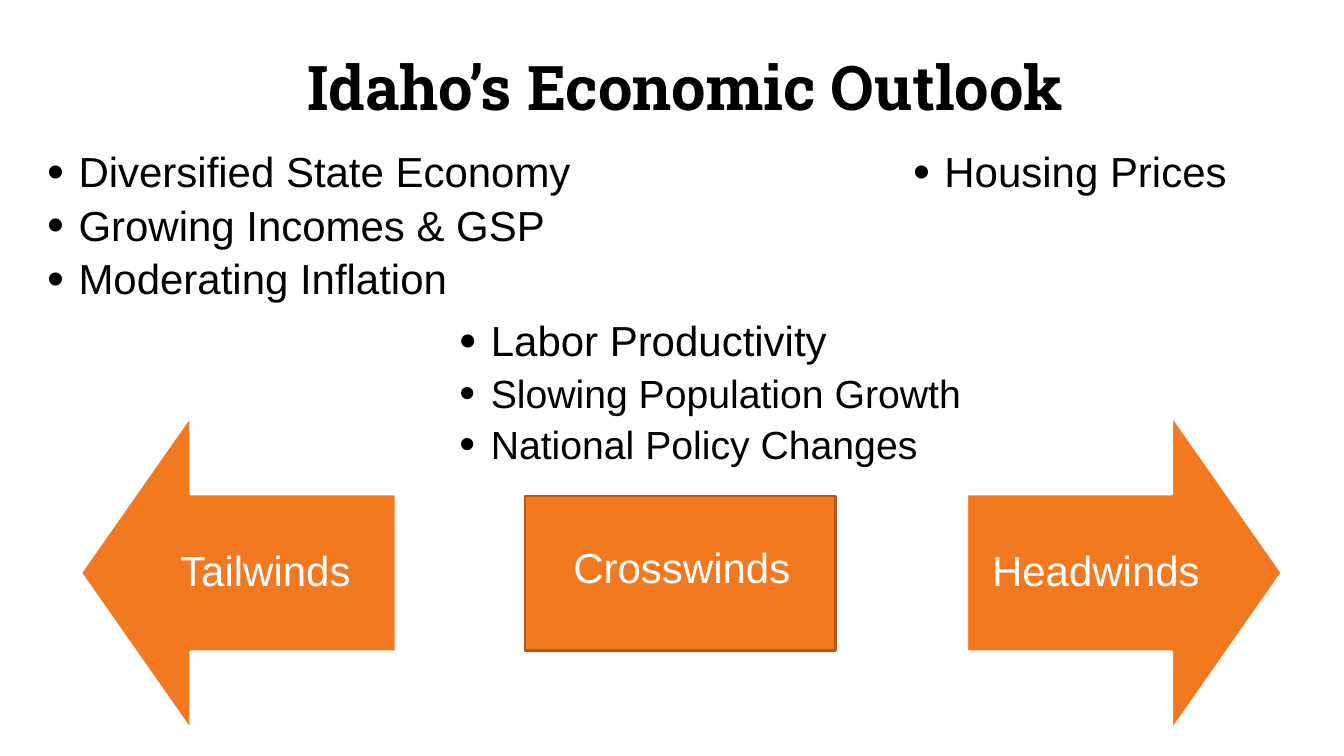
"""Build the slide on Idaho's economic outlook."""
from lxml import etree
from pptx import Presentation
from pptx import util as u
from pptx.dml.color import RGBColor
from pptx.enum import shapes, text
from pptx.oxml import ns

ORANGE = RGBColor(0xF3, 0x79, 0x20)
RUST = RGBColor(0xB4, 0x5A, 0x18)
BLACK = RGBColor(0, 0, 0)
WHITE = RGBColor(255, 255, 255)
INSET = (0.25, 0.13)


class Outlook:
    """Holds the style and the current page."""

    body = "Arial"
    heading = "Roboto Slab"
    size = 30

    def __init__(self, page):
        self.page = page

    def place(self, at):
        """Turn centimetres into lengths."""
        return [u.Cm(value) for value in at]

    def shape(self, kind, at, line, rotation=0):
        """Add an orange shape with an outline."""
        shape = self.page.shapes.add_shape(kind, *self.place(at))
        shape.shadow.inherit = False
        shape.rotation = rotation
        shape.fill.solid()
        shape.fill.fore_color.rgb = ORANGE
        shape.line.color.rgb = line
        shape.line.width = u.Pt(2)
        return shape

    def box(self, at, inset=INSET, anchor=text.MSO_ANCHOR.TOP):
        """Add an empty wrapping text box."""
        frame = self.page.shapes.add_textbox(*self.place(at)).text_frame
        side, top = self.place(inset)
        values = dict(word_wrap=True, vertical_anchor=anchor, margin_left=side,
                      margin_right=side, margin_top=top, margin_bottom=top)
        for name, value in values.items():
            setattr(frame, name, value)
        return frame

    def wording(self, para, words, font=None, **layout):
        """Fill a paragraph with one formatted span."""
        for name, value in layout.items():
            setattr(para, name, value)
        span = para.add_run()
        span.text = words
        style = dict(name=self.body, size=self.size, color=BLACK, bold=False)
        style.update(font or {})
        span.font.color.rgb = style.pop("color")
        style["size"] = u.Pt(style["size"])
        for name, value in style.items():
            setattr(span.font, name, value)

    def title(self, words, at):
        """Add the centred heading."""
        self.wording(self.box(at).paragraphs[0], words,
                     dict(name=self.heading, size=44, bold=True),
                     alignment=text.PP_ALIGN.CENTER, line_spacing=0.9)

    def bullet(self, para):
        """Give a paragraph a hanging round bullet."""
        props = para._p.get_or_add_pPr()
        props.set("marL", str(u.Cm(1.27)))
        props.set("indent", str(u.Cm(-0.79)))
        color = etree.SubElement(props, ns.qn("a:buClr"))
        etree.SubElement(color, ns.qn("a:srgbClr"), val=str(BLACK))
        etree.SubElement(props, ns.qn("a:buSzPct"), val="115000")
        etree.SubElement(props, ns.qn("a:buFont"), typeface=self.body)
        etree.SubElement(props, ns.qn("a:buChar"), char="•")

    def points(self, at, items):
        """Add a bulleted list of (words, size) items."""
        frame = self.box(at)
        for index, (words, size) in enumerate(items):
            para = frame.add_paragraph() if index else frame.paragraphs[0]
            self.bullet(para)
            self.wording(para, words, dict(size=size),
                         line_spacing=0.9, space_after=u.Pt(6))

    def arrow(self, words, left, rotation, label_left):
        """Add a turned arrow and its label."""
        arrow = self.shape(shapes.MSO_SHAPE.UP_ARROW,
                           (left, 10.46, 7.95, 7.95), WHITE, rotation)
        arrow.adjustments[0] = 0.5
        arrow.adjustments[1] = 0.35
        label = self.box((label_left, 12.45, 6.58, 3.96), (0.58, 0.58),
                         text.MSO_ANCHOR.MIDDLE)
        self.wording(label.paragraphs[0], words, dict(color=WHITE),
                     alignment=text.PP_ALIGN.CENTER, line_spacing=0.9)

    def block(self, words, at, label_at):
        """Add a rectangle and its label."""
        self.shape(shapes.MSO_SHAPE.RECTANGLE, at, RUST)
        self.wording(self.box(label_at).paragraphs[0], words,
                     dict(color=WHITE))


def main():
    """Draw the page and save the deck."""
    deck = Presentation()
    deck.slide_width, deck.slide_height = u.Cm(33.87), u.Cm(19.05)
    outlook = Outlook(deck.slides.add_slide(deck.slide_layouts[6]))
    outlook.arrow("Tailwinds", 2.03, 270, 3.4)
    outlook.arrow("Headwinds", 24.36, 90, 24.33)
    outlook.title("Idaho’s Economic Outlook", (2.67, 1.32, 29.21, 1.9))
    outlook.points((0.46, 3.68, 16.15, 4.88), [
        ("Diversified State Economy", 30),
        ("Growing Incomes & GSP", 30),
        ("Moderating Inflation", 30)])
    outlook.points((22.28, 3.68, 11.5, 4.52), [("Housing Prices", 30)])
    outlook.block("Crosswinds", (13.23, 12.5, 7.82, 3.89),
                  (14.2, 13.51, 6.53, 1.55))
    outlook.points((10.85, 7.95, 15.98, 4.04), [
        ("Labor Productivity", 30),
        ("Slowing Population Growth", 28),
        ("National Policy Changes", 28)])
    deck.save("out.pptx")


if __name__ == "__main__":
    main()
